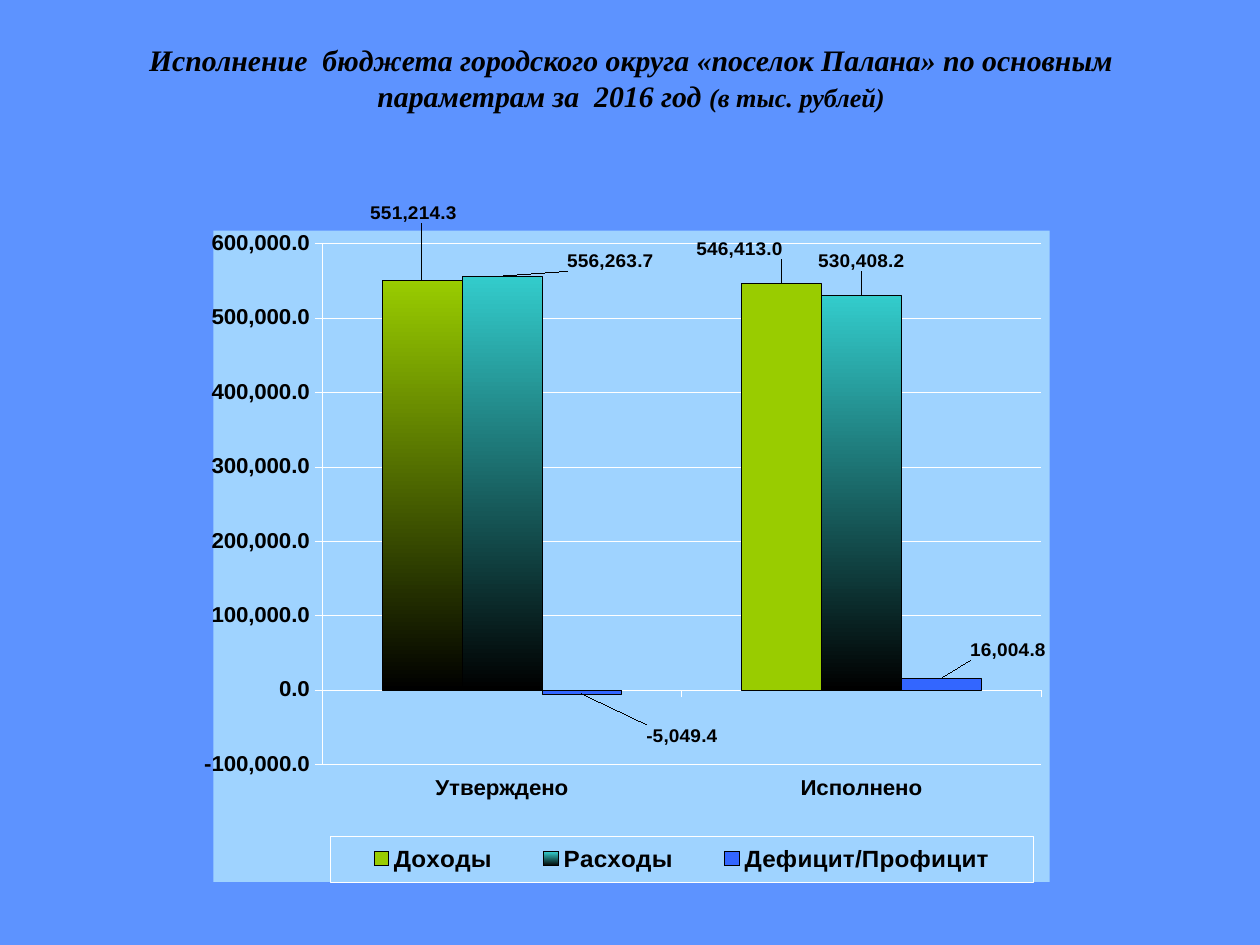
from lxml import etree
from pptx import Presentation
from pptx.chart.data import CategoryChartData
from pptx.dml.color import RGBColor
from pptx.enum.chart import (XL_CHART_TYPE, XL_LABEL_POSITION, XL_LEGEND_POSITION,
                             XL_TICK_LABEL_POSITION, XL_TICK_MARK)
from pptx.enum.text import MSO_ANCHOR, PP_ALIGN
from pptx.oxml import parse_xml
from pptx.oxml.ns import qn
from pptx.util import Inches, Pt

COLUMNS = XL_CHART_TYPE.COLUMN_CLUSTERED
OUTSIDE = XL_LABEL_POSITION.OUTSIDE_END
RIGHT = XL_LEGEND_POSITION.RIGHT
LOW = XL_TICK_LABEL_POSITION.LOW
TICK_OUT = XL_TICK_MARK.OUTSIDE
TICK_NONE = XL_TICK_MARK.NONE
MIDDLE = MSO_ANCHOR.MIDDLE
CENTER = PP_ALIGN.CENTER

BLACK, WHITE = "000000", "FFFFFF"
NUMBER = "#,##0.0"
NS = ('xmlns:c="http://schemas.openxmlformats.org/drawingml/2006/chart" '
      'xmlns:a="http://schemas.openxmlformats.org/drawingml/2006/main"')


def rgb(value):
    return RGBColor.from_string(value)


def manual_layout(**values):
    layout = etree.Element(qn("c:layout"))
    manual = etree.SubElement(layout, qn("c:manualLayout"))
    for tag, value in values.items():
        etree.SubElement(manual, qn("c:" + tag)).set("val", str(value))
    return layout


class BudgetSlide:
    title_font = "Times New Roman"
    chart_font = "Arial"
    hairline = Pt(0.23)

    def __init__(self, prs, background):
        self.s = prs.slides.add_slide(prs.slide_layouts[6])
        fill = self.s.background.fill
        fill.solid()
        fill.fore_color.rgb = rgb(background)

    def font(self, font, size, name, color=BLACK):
        font.size = Pt(size)
        font.name = name
        font.bold = True
        font.color.rgb = rgb(color)

    def line(self, fmt, color):
        fmt.line.color.rgb = rgb(color)
        fmt.line.width = self.hairline

    def gradient(self, fill, color):
        fill.gradient()
        fill.gradient_angle = 270
        for stop, value in zip(fill.gradient_stops, (color, BLACK)):
            stop.color.rgb = rgb(value)

    def title(self, box, runs):
        sp = self.s.shapes.add_textbox(*map(Inches, box))
        tf = sp.text_frame
        tf.word_wrap = True
        tf.vertical_anchor = MIDDLE
        p = tf.paragraphs[0]
        p.alignment = CENTER
        for text, size in runs:
            r = p.add_run()
            r.text = text
            self.font(r.font, size, self.title_font)
            r.font.italic = True

    def chart(self, box, categories, series):
        data = CategoryChartData(number_format=NUMBER)
        data.categories = categories
        for name, values, *_ in series:
            data.add_series(name, values)
        chart = self.s.shapes.add_chart(COLUMNS, *map(Inches, box), data).chart
        chart.has_title = False
        self.font(chart.font, 16.6, self.chart_font, WHITE)
        plot = chart.plots[0]
        plot.gap_width = 150
        plot.overlap = 0
        plot.vary_by_categories = False
        for ser, (_, _, color, shaded, offsets) in zip(plot.series, series):
            self.series(ser, color, shaded, offsets)
        return chart

    def series(self, ser, color, shaded, offsets):
        ser.invert_if_negative = False
        ser.format.fill.solid()
        ser.format.fill.fore_color.rgb = rgb(color)
        self.line(ser.format, BLACK)
        for i in shaded:
            fmt = ser.points[i].format
            self.gradient(fmt.fill, color)
            self.line(fmt, BLACK)
        if len(shaded) == len(offsets):
            self.gradient(ser.format.fill, color)
        labels = ser.data_labels
        labels.show_value = True
        labels.number_format = NUMBER
        labels.number_format_is_linked = False
        labels.position = OUTSIDE
        self.font(labels.font, 11, self.chart_font)
        for i in range(len(offsets)):
            label = ser.points[i].data_label
            label.position = OUTSIDE
            self.font(label.font, 11, self.chart_font)
        for node, (x, y) in zip(labels._element.findall(qn("c:dLbl")), offsets):
            layout = manual_layout(x=x, y=y)
            node.find(qn("c:idx")).addnext(layout)
            layout.addnext(parse_xml(
                f'<c:numFmt {NS} formatCode="{NUMBER}" sourceLinked="0"/>'))

    def axis(self, axis):
        axis.major_tick_mark = TICK_OUT
        axis.minor_tick_mark = TICK_NONE
        self.font(axis.tick_labels.font, 12.9, self.chart_font)
        self.line(axis.format, WHITE)

    def axes(self, chart, low, high, step):
        self.axis(chart.category_axis)
        chart.category_axis.tick_label_position = LOW
        values = chart.value_axis
        self.axis(values)
        values.minimum_scale, values.maximum_scale = low, high
        values.major_unit = step
        values.tick_labels.number_format = NUMBER
        values.tick_labels.number_format_is_linked = False
        values.has_major_gridlines = True
        self.line(values.major_gridlines.format, WHITE)

    def legend(self, chart, x, y, w, h):
        chart.has_legend = True
        legend = chart.legend
        legend.position = RIGHT
        legend.include_in_layout = False
        self.font(legend.font, 14, self.chart_font)
        node = legend._element
        for old in node.findall(qn("c:layout")):
            node.remove(old)
        layout = manual_layout(xMode="edge", yMode="edge", x=x, y=y, w=w, h=h)
        node.find(qn("c:legendPos")).addnext(layout)
        node.find(qn("c:overlay")).addnext(parse_xml(
            f'<c:spPr {NS}><a:noFill/><a:ln w="{self.hairline}"><a:solidFill>'
            f'<a:srgbClr val="{WHITE}"/></a:solidFill></a:ln></c:spPr>'))

    def panel(self, chart, color, alpha, x, y, w, h):
        root = chart.element.find(qn("c:chart"))
        root.addnext(parse_xml(
            f'<c:spPr {NS}><a:solidFill><a:srgbClr val="{color}">'
            f'<a:alpha val="{alpha * 1000}"/></a:srgbClr></a:solidFill>'
            '<a:ln><a:noFill/></a:ln></c:spPr>'))
        area = root.find(qn("c:plotArea"))
        for old in area.findall(qn("c:layout")):
            area.remove(old)
        area.insert(0, manual_layout(layoutTarget="inner", xMode="edge",
                                     yMode="edge", x=x, y=y, w=w, h=h))


def main():
    prs = Presentation()
    prs.slide_width, prs.slide_height = Inches(10), Inches(7.5)
    slide = BudgetSlide(prs, "5D93FF")
    slide.title((0.51, 0, 9, 1.23), [
        ("Исполнение  бюджета городского округа «поселок Палана» "
         "по основным параметрам за  2016 год ", 17),
        ("(в тыс. рублей)", 15)])
    chart = slide.chart((1.62, 1.6, 6.71, 5.4), ["Утверждено", "Исполнено"], [
        ("Доходы", (551214.3, 546413.0), "99CC00", [0],
         [(-0.01, -0.08), (-0.05, -0.03)]),
        ("Расходы", (556263.7, 530408.2), "33CCCC", [0, 1],
         [(0.13, 0), (0, -0.03)]),
        ("Дефицит/Профицит", (-5049.4, 16004.8), "3366FF", [],
         [(0.12, 0.04), (0.08, -0.02)])])
    slide.axes(chart, -100000, 600000, 100000)
    slide.legend(chart, 0.14, 0.93, 0.84, 0.07)
    slide.panel(chart, "CCFFFF", 60, 0.13, 0.02, 0.86, 0.8)
    prs.save("out.pptx")


if __name__ == "__main__":
    main()
